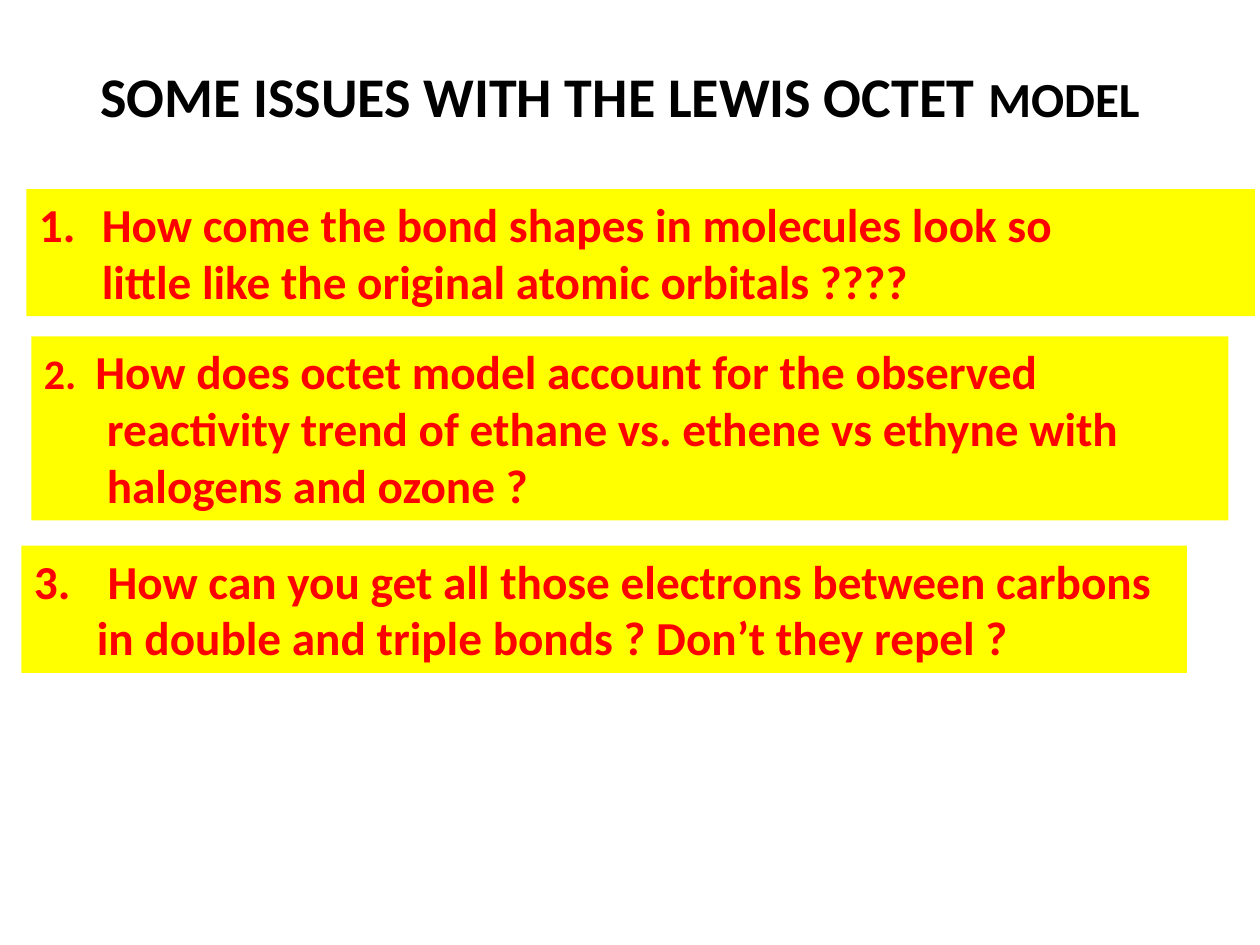
from dataclasses import dataclass

from lxml.etree import SubElement
from pptx import Presentation
from pptx.dml.color import RGBColor
from pptx.enum.shapes import MSO_SHAPE
from pptx.enum.text import MSO_ANCHOR, MSO_AUTO_SIZE, PP_ALIGN
from pptx.oxml.ns import qn
from pptx.util import Inches, Pt

BLACK = RGBColor(0x00, 0x00, 0x00)
RED = RGBColor(0xFF, 0x00, 0x00)
YELLOW = RGBColor(0xFF, 0xFF, 0x00)
FONT = "Calibri"
QUESTION_SIZE = 27
HANGING = 0.5


@dataclass(frozen=True)
class Line:
    runs: tuple[tuple[str, float], ...]  # text and size in points
    first_indent: float = -HANGING
    numbered: bool = False


@dataclass(frozen=True)
class Question:
    left: float
    top: float
    width: float
    height: float
    lines: tuple[Line, ...]


QUESTIONS = (
    Question(0.21, 1.5, 9.75, 1.01, (
        Line((("How come the bond shapes in molecules look so", QUESTION_SIZE),),
             numbered=True),
        Line((("little like the original atomic orbitals ????", QUESTION_SIZE),),
             first_indent=0),
    )),
    Question(0.25, 2.67, 9.5, 1.46, (
        Line((("2.  ", 24),
              ("How does octet model account for the observed reactivity trend of "
               "ethane vs. ethene vs ethyne with halogens and ozone ?", QUESTION_SIZE))),
    )),
    Question(0.17, 4.33, 9.25, 1.01, (
        Line((("3.\t How can you get all those electrons between carbons in double "
               "and triple bonds ? Don’t they repel ?", QUESTION_SIZE),)),
    )),
)


def add_run(paragraph, text: str, size: float, color: RGBColor) -> None:
    run = paragraph.add_run()
    run.text = text
    run.font.name = FONT
    run.font.size = Pt(size)
    run.font.bold = True
    run.font.color.rgb = color


def add_title(slide) -> None:
    title = slide.shapes.title
    title.left, title.top = Inches(0.42), Inches(0.42)
    title.width, title.height = Inches(9), Inches(0.67)
    title.text_frame.vertical_anchor = MSO_ANCHOR.MIDDLE
    heading = title.text_frame.paragraphs[0]
    heading.alignment = PP_ALIGN.CENTER
    add_run(heading, "SOME ISSUES WITH THE LEWIS OCTET ", 32, BLACK)
    add_run(heading, "MODEL", 28, BLACK)


def add_question(slide, question: Question) -> None:
    box = slide.shapes.add_shape(
        MSO_SHAPE.RECTANGLE, Inches(question.left), Inches(question.top),
        Inches(question.width), Inches(question.height))
    box.shadow.inherit = False
    box.fill.solid()
    box.fill.fore_color.rgb = YELLOW
    box.line.fill.background()
    frame = box.text_frame
    frame.word_wrap = True
    frame.auto_size = MSO_AUTO_SIZE.SHAPE_TO_FIT_TEXT
    frame.vertical_anchor = MSO_ANCHOR.TOP
    for index, line in enumerate(question.lines):
        paragraph = frame.add_paragraph() if index else frame.paragraphs[0]
        paragraph.alignment = PP_ALIGN.LEFT
        # Hanging indent and automatic number
        properties = paragraph._p.get_or_add_pPr()
        properties.set("marL", str(Inches(HANGING)))
        properties.set("indent", str(Inches(line.first_indent)))
        if line.numbered:
            SubElement(properties, qn("a:buAutoNum"), type="arabicPeriod")
        for text, size in line.runs:
            add_run(paragraph, text, size, RED)


def main() -> None:
    presentation = Presentation()
    presentation.slide_width = Inches(10)
    presentation.slide_height = Inches(7.5)
    # Title Only layout
    slide = presentation.slides.add_slide(presentation.slide_layouts[5])
    add_title(slide)
    for question in QUESTIONS:
        add_question(slide, question)
    presentation.save("out.pptx")


if __name__ == "__main__":
    main()
